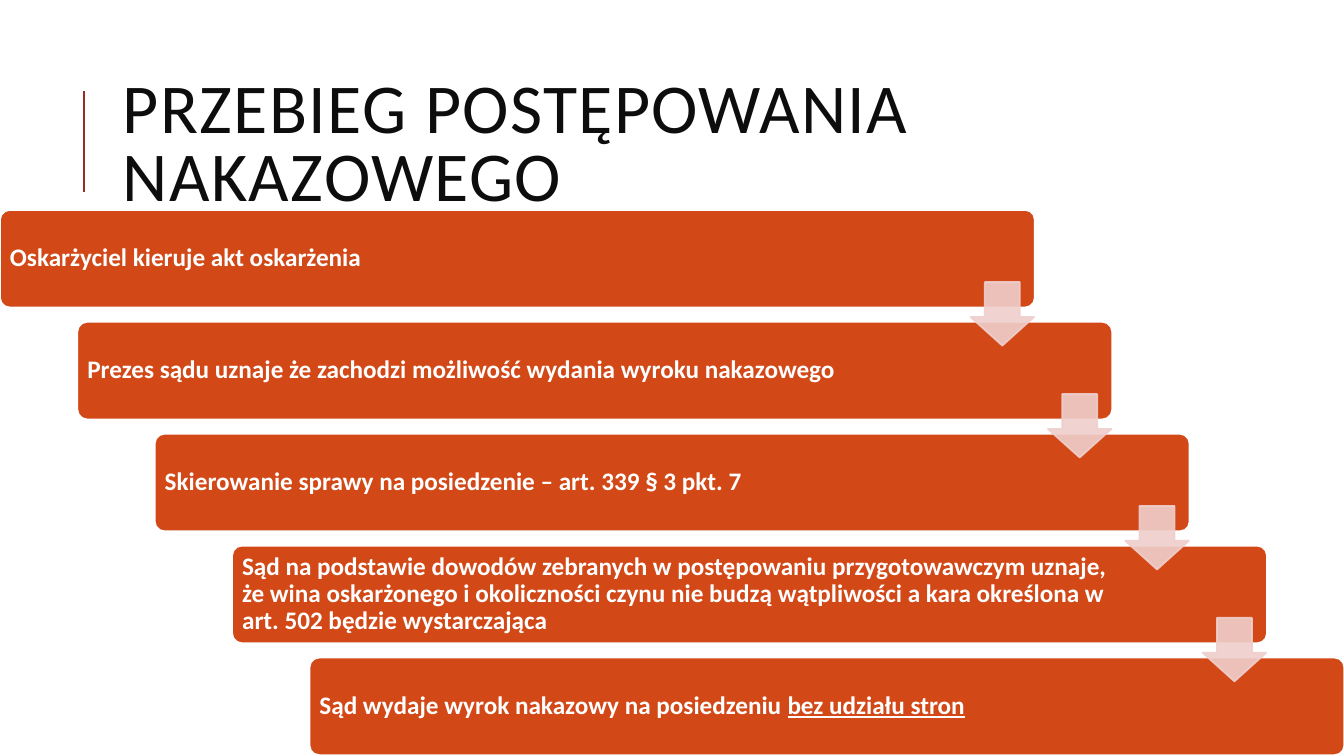
"""Build the slide with the five steps of the penal order procedure."""
from lxml.etree import SubElement
from pptx import Presentation
from pptx.dml.color import RGBColor
from pptx.enum.shapes import MSO_CONNECTOR, MSO_SHAPE
from pptx.enum.text import MSO_ANCHOR, MSO_AUTO_SIZE, PP_ALIGN
from pptx.oxml.ns import qn
from pptx.util import Cm, Pt


def rgb(value):
    return RGBColor.from_string(value)


def add_box(s, kind, place, adjustments, fill, line):
    sp = s.shapes.add_shape(kind, *[Cm(v) for v in place])
    sp.shadow.inherit = False
    for i, value in enumerate(adjustments):
        sp.adjustments[i] = value
    sp.fill.solid()
    sp.fill.fore_color.rgb = rgb(fill)
    sp.line.color.rgb = rgb(line)
    sp.line.width = Pt(1.25)
    return sp


STEP_X, STEP_Y = 1.95, 2.82
STEPS = [
    ["Oskarżyciel kieruje akt oskarżenia"],
    ["Prezes sądu uznaje że zachodzi możliwość wydania wyroku nakazowego"],
    ["Skierowanie sprawy na posiedzenie – art. 339 § 3 pkt. 7"],
    ["Sąd na podstawie dowodów zebranych w postępowaniu przygotowawczym uznaje, "
     "że wina oskarżonego i okoliczności czynu nie budzą wątpliwości a kara "
     "określona w art. 502 będzie wystarczająca"],
    ["Sąd wydaje wyrok nakazowy na posiedzeniu ", "bez udziału stron"],
]
STEP_FONT = {"name": "Calibri", "size": Pt(18), "bold": True}
STEP_FRAME = {"word_wrap": True, "vertical_anchor": MSO_ANCHOR.MIDDLE,
              "margin_left": Cm(0.18), "margin_right": Cm(3.74),
              "margin_top": Cm(0.18), "margin_bottom": Cm(0.18)}
TITLE_FONT = {"name": "Calibri", "size": Pt(50), "bold": False}
TITLE_FRAME = {"word_wrap": True, "vertical_anchor": MSO_ANCHOR.MIDDLE,
               "auto_size": MSO_AUTO_SIZE.NONE}

prs = Presentation()
prs.slide_width, prs.slide_height = Cm(33.87), Cm(19.05)
s = prs.slides.add_slide(prs.slide_layouts[5])

rule = s.shapes.add_connector(MSO_CONNECTOR.STRAIGHT, Cm(2.12), Cm(4.83), Cm(2.12), Cm(2.29))
rule.line.color.rgb = rgb("9B2D1F")
rule.line.width = Pt(1.5)
SubElement(rule._element.spPr, qn("a:effectLst"))

title = s.shapes.title
title.left, title.top, title.width, title.height = Cm(2.84), Cm(1.63), Cm(27), Cm(4.17)
tf = title.text_frame
for key, value in TITLE_FRAME.items():
    setattr(tf, key, value)
p = tf.paragraphs[0]
p.alignment = PP_ALIGN.LEFT
p.line_spacing = 0.8
r = p.add_run()
r.text = "PRZEBIEG POSTĘPOWANIA NAKAZOWEGO"
for key, value in TITLE_FONT.items():
    setattr(r.font, key, value)
r.font.color.rgb = rgb("0D0D0D")
r.font._element.set("spc", "100")

for i, texts in enumerate(STEPS):
    place = (i * STEP_X, 5.29 + i * STEP_Y, 26.08, 2.46)
    sp = add_box(s, MSO_SHAPE.ROUNDED_RECTANGLE, place, [0.1], "D34817", "FFFFFF")
    tf = sp.text_frame
    for key, value in STEP_FRAME.items():
        setattr(tf, key, value)
    p = tf.paragraphs[0]
    p.alignment = PP_ALIGN.LEFT
    p.line_spacing = 0.9
    for j, text in enumerate(texts):
        r = p.add_run()
        r.text = text
        for key, value in STEP_FONT.items():
            setattr(r.font, key, value)
        r.font.color.rgb = rgb("FFFFFF")
        r.font.underline = j == 1

for i in range(len(STEPS) - 1):
    place = (24.46 + i * STEP_X, 7.11 + i * STEP_Y, 1.6, 1.6)
    arrow = add_box(s, MSO_SHAPE.DOWN_ARROW, place, [0.55, 0.45], "EFCFCC", "EFCFCC")
    for color in arrow._element.spPr.iter(qn("a:srgbClr")):
        SubElement(color, qn("a:alpha"), val="90000")

prs.save("out.pptx")
